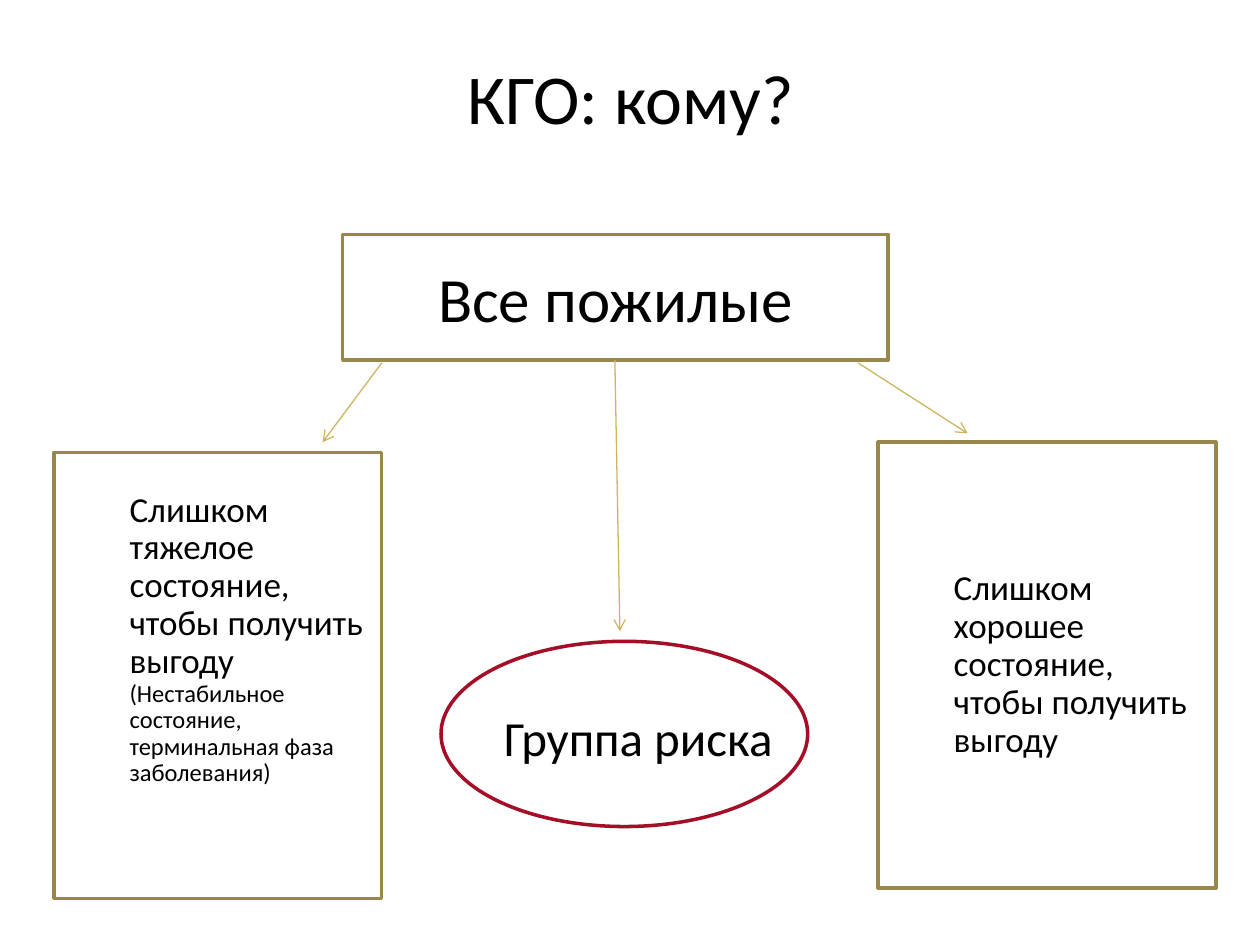
"""Build the slide on who needs a geriatric assessment."""
import pptx
import pptx.util
import pptx.dml.color
import pptx.enum.shapes
import pptx.enum.text
from pptx.oxml.ns import qn
from lxml import etree

Inches, Pt = pptx.util.Inches, pptx.util.Pt
KIND = pptx.enum.shapes.MSO_SHAPE
ALIGN = pptx.enum.text.PP_ALIGN
MID = pptx.enum.text.MSO_ANCHOR.MIDDLE

FONT, INK, GOLD, SAND, RED = "Calibri", "000000", "98894B", "CCB661", "A40E27"

TITLE = ((0.28, 0.3, 9.45, 0.93), [("КГО: кому?", 40)])
RISK = ((3.9, 5.56, 2.36, 0.57), [("Группа риска", 28)])
OVAL = (3.5, 5.09, 2.91, 1.47)
TOP = ((2.72, 1.86, 4.33, 1), [("Все пожилые", 36)])
SIDES = [
    ((0.43, 3.59, 2.6, 3.54), 0.62, [
        ("Слишком тяжелое состояние, чтобы получить выгоду", 20),
        ("(Нестабильное состояние, терминальная фаза заболевания)", 14)]),
    ((6.97, 3.51, 2.68, 3.54), 0.05, [
        ("Слишком хорошее состояние, чтобы получить выгоду", 20)]),
]
ARROWS = [
    (3.03, 2.88, 2.56, 3.51),
    (6.81, 2.88, 7.68, 3.44),
    (4.88, 2.86, 4.92, 5.01),
]


def color(code):
    return pptx.dml.color.RGBColor.from_string(code)


def write(shape, lines, align=ALIGN.CENTER, inner=False, wrap=True):
    frame = shape.text_frame
    frame.word_wrap = wrap
    frame.vertical_anchor = MID
    for i, (text, size) in enumerate(lines):
        para = frame.add_paragraph() if i else frame.paragraphs[0]
        para.alignment = align
        if inner:
            para.level = 1
            para.line_spacing = 0.9
            props = para._p.get_or_add_pPr()
            props.set("marL", str(Inches(0.5)))
            props.set("indent", "0")
        run = para.add_run()
        run.text = text
        run.font.name = FONT
        run.font.size = Pt(size)
        run.font.color.rgb = color(INK)


def draw(slide, kind, area, line, fill=None):
    shape = slide.shapes.add_shape(kind, *map(Inches, area))
    shape.shadow.inherit = False
    if fill:
        shape.fill.solid()
        shape.fill.fore_color.rgb = color(fill)
    else:
        shape.fill.background()
    shape.line.color.rgb = color(line)
    shape.line.width = Pt(2)
    return shape


def label(slide, area):
    return slide.shapes.add_textbox(*map(Inches, area))


def arrow(slide, ends):
    link = slide.shapes.add_connector(
        pptx.enum.shapes.MSO_CONNECTOR.STRAIGHT, *map(Inches, ends))
    link.line.color.rgb = color(SAND)
    link.line.width = Pt(0.75)
    etree.SubElement(link.line._get_or_add_ln(), qn("a:tailEnd"), type="arrow")
    etree.SubElement(link._element.spPr, qn("a:effectLst"))


def main():
    deck = pptx.Presentation()
    deck.slide_width, deck.slide_height = Inches(10), Inches(7.5)
    slide = deck.slides.add_slide(deck.slide_layouts[6])

    area, lines = TITLE
    write(label(slide, area), lines)
    area, lines = TOP
    write(draw(slide, KIND.RECTANGLE, area, GOLD), lines)
    for area, base, lines in SIDES:
        box = draw(slide, KIND.RECTANGLE, area, GOLD)
        box.text_frame.margin_bottom = Inches(base)
        write(box, lines, ALIGN.LEFT, inner=True)
    draw(slide, KIND.OVAL, OVAL, RED, "FFFFFF")
    area, lines = RISK
    write(label(slide, area), lines, ALIGN.LEFT, wrap=False)
    for ends in ARROWS:
        arrow(slide, ends)
    deck.save("out.pptx")


if __name__ == "__main__":
    main()
